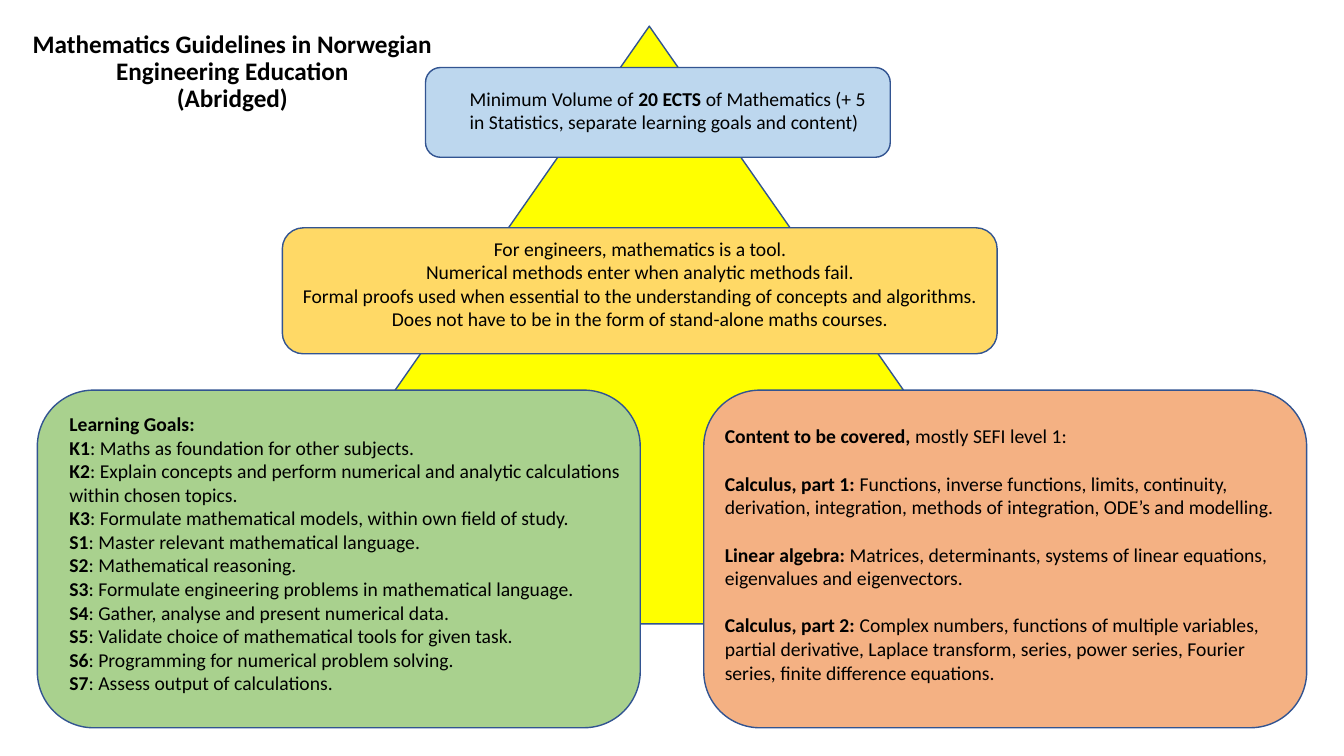
from pptx import Presentation
from pptx.dml.color import RGBColor
from pptx.enum.shapes import MSO_SHAPE as Shape
from pptx.enum.text import MSO_ANCHOR as Anchor, PP_ALIGN as Align
from pptx.util import Pt

PX = 9144  # 100 px to the inch
FONT = "Calibri"
INK, EDGE = "000000", "325491"

TITLE = "Mathematics Guidelines in Norwegian Engineering Education\n(Abridged)"
TITLE_BOX = (19, 20, 423, 103)

# kind, (left, top, width, height), fill
SHAPES = [
    (Shape.ISOSCELES_TRIANGLE, (230, 26, 828, 593), "FFFF00"),
    (Shape.ROUNDED_RECTANGLE, (280, 226, 709, 125), "FFD966"),
    (Shape.ROUNDED_RECTANGLE, (698, 387, 598, 335), "F4B183"),
    (Shape.ROUNDED_RECTANGLE, (37, 387, 598, 335), "A9D18E"),
    (Shape.ROUNDED_RECTANGLE, (422, 67, 461, 89), "BDD7EE"),
]

CONTENT = [
    "*Content to be covered,* mostly SEFI level 1:",
    "*Calculus, part 1: *Functions, inverse functions, limits, continuity, "
    "derivation, integration, methods of integration, ODE’s and modelling.",
    "*Linear algebra: *Matrices, determinants, systems of linear equations, "
    "eigenvalues and eigenvectors.",
    "*Calculus, part 2: *Complex numbers, functions of multiple variables, "
    "partial derivative, Laplace transform, series, power series, Fourier "
    "series, finite difference equations.",
]
GOALS = [
    "*Learning Goals:*",
    "*K1*: Maths as foundation for other subjects.",
    "*K2*: Explain concepts and perform numerical and analytic calculations "
    "within chosen topics.",
    "*K3*: Formulate mathematical models, within own field of study.",
    "*S1*: Master relevant mathematical language.",
    "*S2*: Mathematical reasoning.",
    "*S3*: Formulate engineering problems in mathematical language.",
    "*S4*: Gather, analyse and present numerical data.",
    "*S5*: Validate choice of mathematical tools for given task.",
    "*S6*: Programming for numerical problem solving.",
    "*S7*: Assess output of calculations.",
]
VOLUME = [
    "Minimum Volume of *20 ECTS *of Mathematics (+ 5 in Statistics, "
    "separate learning goals and content)",
]
VIEWS = [
    "For engineers, mathematics is a tool.",
    "Numerical methods enter when analytic methods fail.",
    "Formal proofs used when essential to the understanding of concepts and algorithms.",
    "Does not have to be in the form of stand-alone maths courses.",
]
# lines, (left, top, width, height), alignment, gap between paragraphs in points
TEXTS = [
    (CONTENT, (709, 416, 576, 269), Align.LEFT, 17),
    (GOALS, (59, 404, 576, 293), Align.LEFT, 0),
    (VOLUME, (456, 81, 423, 57), Align.LEFT, 0),
    (VIEWS, (288, 230, 694, 104), Align.CENTER, 0),
]


def color(code):
    return RGBColor.from_string(code)


def scale(box):
    return [n * PX for n in box]


def style(font, size):
    font.name, font.size = FONT, Pt(size)
    font.color.rgb = color(INK)


def add_block(kind, box, fill):
    block = slide.shapes.add_shape(kind, *scale(box))
    block.shadow.inherit = False
    block.fill.solid()
    block.fill.fore_color.rgb = color(fill)
    block.line.color.rgb = color(EDGE)
    block.line.width = Pt(1)


def add_text(lines, box, align, gap):
    """Write one paragraph per line; words between asterisks are bold."""
    frame = slide.shapes.add_textbox(*scale(box)).text_frame
    frame.word_wrap = True
    for i, line in enumerate(lines):
        para = frame.add_paragraph() if i else frame.paragraphs[0]
        para.alignment = align
        if i and gap:
            para.space_before = Pt(gap)
        style(para.font, 14)
        for j, part in enumerate(line.split("*")):
            if part:
                run = para.add_run()
                run.text = part
                if j % 2:
                    run.font.bold = True


deck = Presentation()
deck.slide_width, deck.slide_height = scale((1333, 750))
slide = deck.slides.add_slide(deck.slide_layouts[5])

title = slide.shapes.title
title.left, title.top, title.width, title.height = scale(TITLE_BOX)
title.text_frame.vertical_anchor = Anchor.MIDDLE
title.text_frame.word_wrap = True
head = title.text_frame.paragraphs[0]
head.text = TITLE
head.alignment = Align.CENTER
head.line_spacing = 0.9
style(head.font, 18)
head.font.bold = True

for item in SHAPES:
    add_block(*item)
for item in TEXTS:
    add_text(*item)

deck.save("out.pptx")
